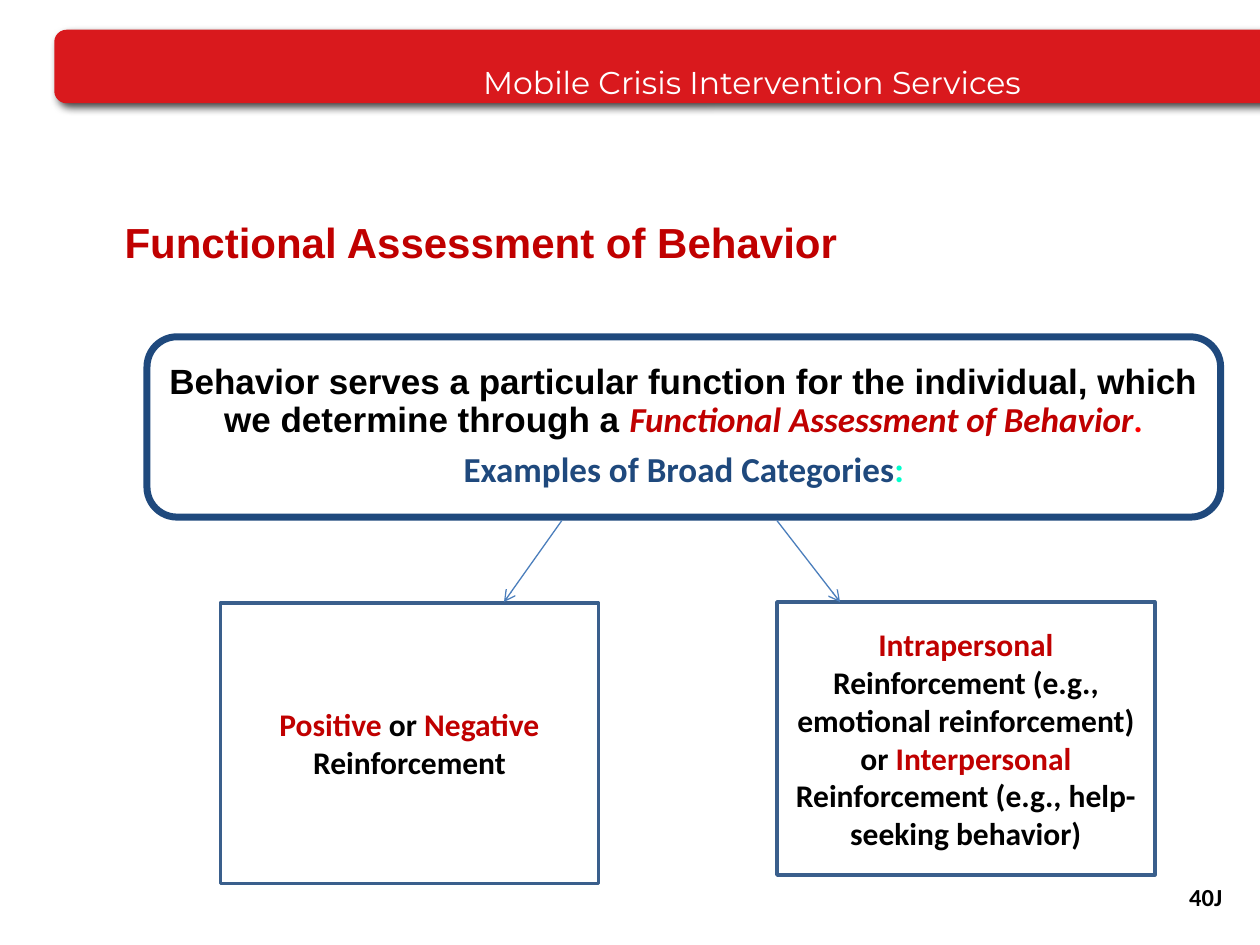
from lxml import etree
from pptx import Presentation
from pptx.dml.color import RGBColor
from pptx.enum.shapes import MSO_CONNECTOR as CONN, MSO_SHAPE as SHAPE
from pptx.enum.text import MSO_ANCHOR as ANCHOR, MSO_AUTO_SIZE as AUTO, PP_ALIGN as ALIGN
from pptx.oxml.ns import qn
from pptx.util import Pt

BANNER_RED = RGBColor(0xD9, 0x19, 0x1D)
DARK_RED = RGBColor(0xC0, 0x00, 0x00)
RED = RGBColor(0xFF, 0x00, 0x00)
NAVY = RGBColor(0x1F, 0x49, 0x7D)
BOX_BLUE = RGBColor(0x3A, 0x5F, 0x8C)
ARROW_BLUE = RGBColor(0x4B, 0x7E, 0xBC)
AQUA = RGBColor(0x00, 0xFF, 0xCC)
BLACK = RGBColor(0x00, 0x00, 0x00)
WHITE = RGBColor(0xFF, 0xFF, 0xFF)


def pts(*values):
    return [Pt(v) for v in values]


def set_font(font, name, size, color=None, bold=None):
    font.name, font.size, font.bold = name, Pt(size), bold
    if color is not None:
        font.color.rgb = color


def add_runs(p, runs):
    for text, color in runs:
        r = p.add_run()
        r.text = text
        r.font.color.rgb = color


def add_frame(slide, kind, box, line, width):
    sp = slide.shapes.add_shape(kind, *pts(*box))
    sp.shadow.inherit = False
    sp.fill.background()
    sp.line.color.rgb = line
    sp.line.width = Pt(width)
    sp.text_frame.word_wrap = True
    sp.text_frame.vertical_anchor = ANCHOR.MIDDLE
    return sp


def add_shadow(sp):
    effects = sp._element.spPr.find(qn("a:effectLst"))
    shadow = etree.SubElement(effects, qn("a:outerShdw"), blurRad=str(Pt(5)),
                              dist=str(Pt(3)), dir="2700000", rotWithShape="0")
    color = etree.SubElement(shadow, qn("a:srgbClr"), val="000000")
    etree.SubElement(color, qn("a:alpha"), val="75000")


def add_banner(slide, box):
    sp = add_frame(slide, SHAPE.ROUNDED_RECTANGLE, box, BANNER_RED, 0.75)
    sp.line.fill.background()
    sp.fill.solid()
    sp.fill.fore_color.rgb = BANNER_RED
    add_shadow(sp)
    tf = sp.text_frame
    tf.word_wrap = False
    tf.margin_left, tf.margin_top, tf.margin_bottom = pts(243, 20, 0)
    p = tf.paragraphs[0]
    p.text = "Mobile Crisis Intervention Services"
    p.alignment = ALIGN.LEFT
    p.line_spacing = 0.9
    set_font(p.font, "Montserrat", 18, WHITE)


def add_title(slide, box):
    title = slide.shapes.title
    title.left, title.top, title.width, title.height = pts(*box)
    tf = title.text_frame
    tf.auto_size = AUTO.NONE
    tf.word_wrap = True
    tf.vertical_anchor = ANCHOR.TOP
    p = tf.paragraphs[0]
    p.text = "Functional Assessment of Behavior"
    p.alignment = ALIGN.LEFT
    set_font(p.font, "Arial", 24, DARK_RED, True)


def add_callout(slide, box):
    sp = add_frame(slide, SHAPE.ROUNDED_RECTANGLE, box, NAVY, 4)
    tf = sp.text_frame
    tf.margin_left = tf.margin_right = Pt(4)
    p = tf.paragraphs[0]
    add_runs(p, [
        ("Behavior serves a particular function for the individual, "
         "which we determine through a ", BLACK),
        ("Functional Assessment of Behavior", DARK_RED),
        (".", RED),
    ])
    p.runs[0].font.name = "Arial"
    for r in p.runs[1:]:
        r.font.italic = True
    examples = tf.add_paragraph()
    add_runs(examples, [("Examples of Broad Categories", NAVY), (":", AQUA)])
    examples.space_before = Pt(7)
    for p in tf.paragraphs:
        p.alignment = ALIGN.CENTER
        p.line_spacing = 0.9
        set_font(p.font, "Calibri", 20, bold=True)


def add_category(slide, box, runs):
    sp = add_frame(slide, SHAPE.RECTANGLE, box, BOX_BLUE, 2)
    p = sp.text_frame.paragraphs[0]
    add_runs(p, runs)
    p.alignment = ALIGN.CENTER
    set_font(p.font, "Calibri", 18, bold=True)


def add_arrow(slide, start, end):
    cx = slide.shapes.add_connector(CONN.STRAIGHT, *pts(*start, *end))
    cx.line.color.rgb = ARROW_BLUE
    cx.line.width = Pt(0.75)
    etree.SubElement(cx.line._get_or_add_ln(), qn("a:tailEnd"), type="arrow")
    etree.SubElement(cx._element.spPr, qn("a:effectLst"))


def add_page_label(slide, box):
    tf = slide.shapes.add_textbox(*pts(*box)).text_frame
    tf.word_wrap = True
    tf.vertical_anchor = ANCHOR.MIDDLE
    p = tf.paragraphs[0]
    p.text = "40J"
    p.alignment = ALIGN.RIGHT
    set_font(p.font, "Calibri", 14, BLACK, True)


def main():
    prs = Presentation()
    prs.slide_width, prs.slide_height = pts(720, 540)
    slide = prs.slides.add_slide(prs.slide_layouts[5])
    add_banner(slide, (31, 17, 707, 42))
    add_callout(slide, (84, 192.5, 613.5, 103))
    add_page_label(slide, (381.5, 498, 324, 29))
    add_category(slide, (444, 344, 216, 156), [
        ("Intrapersonal ", DARK_RED),
        ("Reinforcement (e.g., emotional reinforcement) or ", BLACK),
        ("Interpersonal ", DARK_RED),
        ("Reinforcement (e.g., help-seeking behavior)", BLACK),
    ])
    add_category(slide, (126, 344.5, 216, 160.5), [
        ("Positive", DARK_RED), (" or ", BLACK),
        ("Negative", DARK_RED), (" Reinforcement", BLACK),
    ])
    add_arrow(slide, (444, 297.5), (480, 344))
    add_arrow(slide, (321, 297.5), (288, 344))
    add_title(slide, (64, 120, 564, 36))
    prs.save("out.pptx")


if __name__ == "__main__":
    main()
